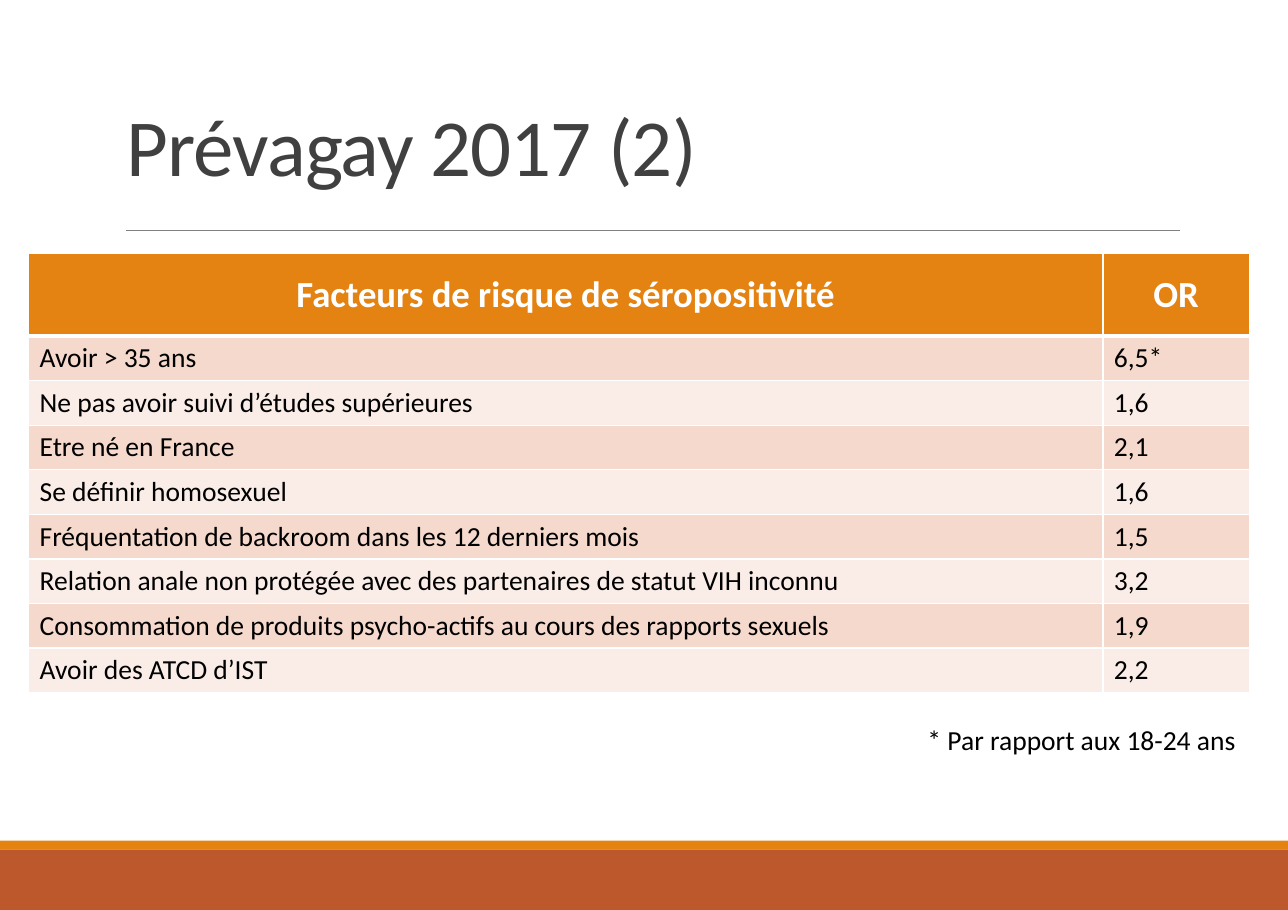
from dataclasses import dataclass

from lxml import etree
from pptx import Presentation
from pptx.dml.color import RGBColor
from pptx.enum.shapes import MSO_CONNECTOR, MSO_SHAPE
from pptx.enum.text import MSO_ANCHOR as ANCHOR, PP_ALIGN as ALIGN
from pptx.oxml.ns import qn
from pptx.util import Inches, Pt


@dataclass(frozen=True)
class Theme:
    font: str = "Calibri"
    orange: str = "E48312"
    rust: str = "BD582C"
    band_dark: str = "F5D9CC"
    band_light: str = "FAEDE7"
    title: str = "404040"
    rule: str = "808080"
    white: str = "FFFFFF"
    black: str = "000000"
    title_size: float = 52.9
    header_size: float = 24
    body_size: float = 18


T = Theme()
SLIDE_W, SLIDE_H = 11.69, 8.26
COL_WIDTHS = (9.75, 1.33)
HEADER_H, BODY_H = 0.75, 3.24

HEADER = ("Facteurs de risque de séropositivité", "OR")
RISK_FACTORS = [
    ("Avoir > 35 ans", "6,5*"),
    ("Ne pas avoir suivi d’études supérieures", "1,6"),
    ("Etre né en France", "2,1"),
    ("Se définir homosexuel", "1,6"),
    ("Fréquentation de backroom dans les 12 derniers mois", "1,5"),
    ("Relation anale non protégée avec des partenaires de statut VIH inconnu", "3,2"),
    ("Consommation de produits psycho-actifs au cours des rapports sexuels", "1,9"),
    ("Avoir des ATCD d’IST", "2,2"),
]


def rgb(color):
    return RGBColor.from_string(color)


def add_run(p, text, size, color, bold=False):
    r = p.add_run()
    r.text = text
    r.font.name = T.font
    r.font.size = Pt(size)
    r.font.bold = bold
    r.font.color.rgb = rgb(color)
    return r


def add_bar(s, top, height, color):
    sp = s.shapes.add_shape(MSO_SHAPE.RECTANGLE, 0, Inches(top),
                            Inches(SLIDE_W), Inches(height))
    sp.shadow.inherit = False
    sp.fill.solid()
    sp.fill.fore_color.rgb = rgb(color)
    sp.line.fill.background()


def add_rule(s, x1, x2, y):
    line = s.shapes.add_connector(MSO_CONNECTOR.STRAIGHT, Inches(x1), Inches(y),
                                  Inches(x2), Inches(y))
    line.line.color.rgb = rgb(T.rule)
    line.line.width = Pt(0.5)
    etree.SubElement(line._element.spPr, qn("a:effectLst"))


def add_text(s, box, text, size, color, anchor=ANCHOR.TOP, wrap=True):
    sp = s.shapes.add_textbox(*map(Inches, box))
    tf = sp.text_frame
    tf.word_wrap = wrap
    tf.vertical_anchor = anchor
    p = tf.paragraphs[0]
    return p, add_run(p, text, size, color)


def set_borders(cell, top=1, bottom=1):
    tc_pr = cell._tc.get_or_add_tcPr()
    for side, width in (("L", 1), ("R", 1), ("T", top), ("B", bottom)):
        ln = etree.SubElement(tc_pr, qn(f"a:ln{side}"), w=str(Pt(width)))
        fill = etree.SubElement(ln, qn("a:solidFill"))
        etree.SubElement(fill, qn("a:srgbClr"), val=T.white)


def fill_cell(cell, text, row):
    is_header = row == 0
    set_borders(cell, top=3 if row == 1 else 1, bottom=3 if is_header else 1)
    band = T.band_dark if row % 2 else T.band_light
    cell.fill.solid()
    cell.fill.fore_color.rgb = rgb(T.orange if is_header else band)
    p = cell.text_frame.paragraphs[0]
    if is_header:
        cell.vertical_anchor = ANCHOR.MIDDLE
        p.alignment = ALIGN.CENTER
        add_run(p, text, T.header_size, T.white, bold=True)
    else:
        add_run(p, text, T.body_size, T.black)


def add_risk_table(s, left, top):
    rows = [HEADER, *RISK_FACTORS]
    table = s.shapes.add_table(len(rows), len(HEADER), Inches(left), Inches(top),
                               Inches(sum(COL_WIDTHS)),
                               Inches(HEADER_H + BODY_H)).table
    for column, width in zip(table.columns, COL_WIDTHS):
        column.width = Inches(width)
    for i, values in enumerate(rows):
        height = BODY_H / len(RISK_FACTORS) if i else HEADER_H
        table.rows[i].height = Inches(height)
        for j, text in enumerate(values):
            fill_cell(table.cell(i, j), text, i)


def main():
    prs = Presentation()
    prs.slide_width, prs.slide_height = Inches(SLIDE_W), Inches(SLIDE_H)
    s = prs.slides.add_slide(prs.slide_layouts[6])

    # Footer bars and title rule
    add_bar(s, 7.71, 0.55, T.rust)
    add_bar(s, 7.63, 0.08, T.orange)
    add_rule(s, 1.14, 10.71, 2.09)

    # Title, slightly tightened
    p, r = add_text(s, (1.05, 0.35, 9.65, 1.45), "Prévagay 2017 (2)",
                    T.title_size, T.title, ANCHOR.BOTTOM)
    p.line_spacing = 0.85
    r.font._element.set("spc", "-60")

    # Risk factors and footnote
    add_risk_table(s, 0.26, 2.3)
    add_text(s, (8.32, 6.51, 3.03, 0.4), "* Par rapport aux 18-24 ans",
             T.body_size, T.black, wrap=False)

    prs.save("out.pptx")


if __name__ == "__main__":
    main()
